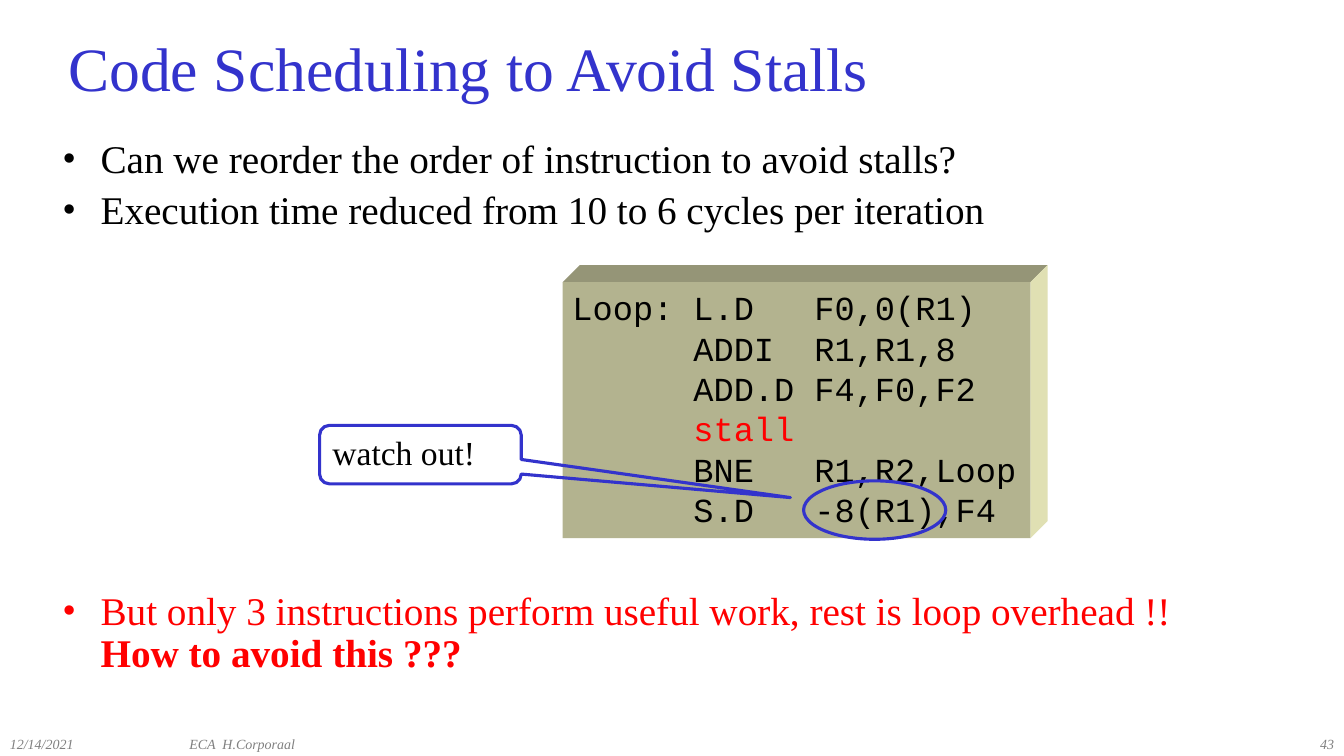
from dataclasses import dataclass, field

import pptx
import pptx.dml.color
import pptx.enum.shapes
import pptx.enum.text
import pptx.oxml
import pptx.oxml.ns
import pptx.util

Inches, Pt = pptx.util.Inches, pptx.util.Pt
Shape = pptx.enum.shapes.MSO_SHAPE
Align = pptx.enum.text.PP_ALIGN
Anchor = pptx.enum.text.MSO_ANCHOR

COLORS = {
    "blue": "3333CC", "black": "000000", "red": "FF0000", "gray": "808080",
    "front": "B3B38F", "top": "959577", "side": "E0E0B3",
}
SERIF, MONO = "Times New Roman", "Courier New"


@dataclass
class Span:
    text: str
    color: str = "black"
    bold: bool = False


@dataclass
class TextBlock:
    at: tuple[float, float, float, float]
    paras: list[list[Span]]
    size: float
    font: str = SERIF
    italic: bool = False
    bullet: bool = False
    tabs: tuple[float, ...] = ()
    frame_format: dict = field(default_factory=dict)
    para_format: dict = field(default_factory=dict)


def rgb(name: str) -> pptx.dml.color.RGBColor:
    return pptx.dml.color.RGBColor.from_string(COLORS[name])


def set_all(target, values: dict) -> None:
    for name, value in values.items():
        setattr(target, name, value)


def add_para_xml(para, xml: str) -> None:
    namespace = pptx.oxml.ns.nsdecls("a")
    element = pptx.oxml.parse_xml(xml.replace(">", f" {namespace}>", 1))
    para._p.get_or_add_pPr().append(element)


def write_text(frame, block: TextBlock) -> None:
    set_all(frame, {"word_wrap": True, **block.frame_format})
    for index, spans in enumerate(block.paras):
        para = frame.add_paragraph() if index else frame.paragraphs[0]
        set_all(para, {"alignment": Align.LEFT, **block.para_format})
        if block.bullet:
            props = para._p.get_or_add_pPr()
            props.set("marL", str(Inches(0.38)))
            props.set("indent", str(Inches(-0.38)))
            add_para_xml(para, f'<a:buFont typeface="{block.font}"></a:buFont>')
            add_para_xml(para, '<a:buChar char="•"></a:buChar>')
        if block.tabs:
            stops = "".join(f'<a:tab pos="{Inches(stop)}" algn="l"/>' for stop in block.tabs)
            add_para_xml(para, f"<a:tabLst>{stops}</a:tabLst>")
        for number, span in enumerate(spans):
            if number:
                para.add_line_break()
            run = para.add_run()
            run.text = span.text
            set_all(run.font, {"name": block.font, "size": Pt(block.size),
                               "bold": span.bold, "italic": block.italic})
            run.font.color.rgb = rgb(span.color)


def add_text(page, block: TextBlock) -> None:
    box = page.shapes.add_textbox(*map(Inches, block.at))
    write_text(box.text_frame, block)


def add_outline(page, kind, at: tuple[float, ...]):
    shape = page.shapes.add_shape(kind, *map(Inches, at))
    shape.shadow.inherit = False
    shape.fill.background()
    shape.line.color.rgb = rgb("blue")
    shape.line.width = Pt(2.25)
    return shape


def add_face(page, points: list[tuple[float, float]], color: str) -> None:
    corners = [(Inches(x), Inches(y)) for x, y in points]
    builder = page.shapes.build_freeform(*corners[0])
    builder.add_line_segments(corners[1:], close=True)
    face = builder.convert_to_shape()
    face.shadow.inherit = False
    face.fill.solid()
    face.fill.fore_color.rgb = rgb(color)
    face.line.fill.background()


def add_code_block(page, block: TextBlock, depth: float) -> None:
    left, top, width, height = block.at
    right, bottom = left + width, top + height
    back_top, back_right = top - depth, right + depth
    add_face(page, [(left, top), (left + depth, back_top),
                    (back_right, back_top), (right, top)], "top")
    add_face(page, [(right, top), (back_right, back_top),
                    (back_right, bottom - depth), (right, bottom)], "side")
    front = page.shapes.add_shape(Shape.RECTANGLE, *map(Inches, block.at))
    front.shadow.inherit = False
    front.fill.solid()
    front.fill.fore_color.rgb = rgb("front")
    front.line.fill.background()
    write_text(front.text_frame, block)


def main() -> None:
    deck = pptx.Presentation()
    deck.slide_width, deck.slide_height = Inches(13.33), Inches(7.5)
    page = deck.slides.add_slide(deck.slide_layouts[6])

    # Footer
    for left, width, text, align in [
        (0, 1.78, "12/14/2021", Align.LEFT),
        (1.78, 4.22, "ECA  H.Corporaal", Align.LEFT),
        (10.55, 2.78, "43", Align.RIGHT),
    ]:
        add_text(page, TextBlock((left, 7.25, width, 0.25), [[Span(text, "gray")]], 10,
                                 italic=True, para_format={"alignment": align}))

    # Title
    add_text(page, TextBlock((0.58, 0.25, 12.44, 0.83),
                             [[Span("Code Scheduling to Avoid Stalls", "blue")]], 44,
                             frame_format={"vertical_anchor": Anchor.MIDDLE}))

    # Bullets above and below the code
    bullet_format = {"line_spacing": 0.9, "space_before": Pt(5.6)}
    for top, height, paras in [
        (1.34, 1.1, [
            [Span("Can we reorder the order of instruction to avoid stalls?")],
            [Span("Execution time reduced from 10 to 6 cycles per iteration")],
        ]),
        (5.82, 1.1, [[
            Span("But only 3 instructions perform useful work, rest is loop overhead !!", "red"),
            Span("How to avoid this ???", "red", bold=True),
        ]]),
    ]:
        add_text(page, TextBlock((0.52, top, 12.56, height), paras, 28,
                                 bullet=True, para_format=bullet_format))

    # Code on a raised block, in three tabbed columns
    code = [
        "Loop:\tL.D\tF0,0(R1)",
        "\tADDI\tR1,R1,8",
        "\tADD.D\tF4,F0,F2",
        "\tstall",
        "\tBNE\tR1,R2,Loop",
        "\tS.D\t-8(R1),F4",
    ]
    add_code_block(page, TextBlock(
        (5.58, 2.8, 4.64, 2.54),
        [[Span(line, "red" if "stall" in line else "black")] for line in code],
        24, MONO, tabs=(1.2, 2.4),
        frame_format={"vertical_anchor": Anchor.TOP, "margin_top": Inches(0.05),
                      "margin_right": 0, "margin_bottom": 0},
        para_format={"line_spacing": Pt(28.8)}), depth=0.17)

    # Warning callout and the ringed operand
    callout_at = (3.17, 4.22, 2, 0.58)
    callout = add_outline(page, Shape.ROUNDED_RECTANGULAR_CALLOUT, callout_at)
    for index, value in enumerate((1.835, 0.735, 0.167)):
        callout.adjustments[index] = value
    write_text(callout.text_frame, TextBlock(
        callout_at, [[Span("watch out!")]], 24,
        frame_format={"vertical_anchor": Anchor.MIDDLE, "margin_bottom": Inches(0.09)}))
    add_outline(page, Shape.OVAL, (7.97, 4.77, 1.41, 0.58))

    deck.save("out.pptx")


if __name__ == "__main__":
    main()
